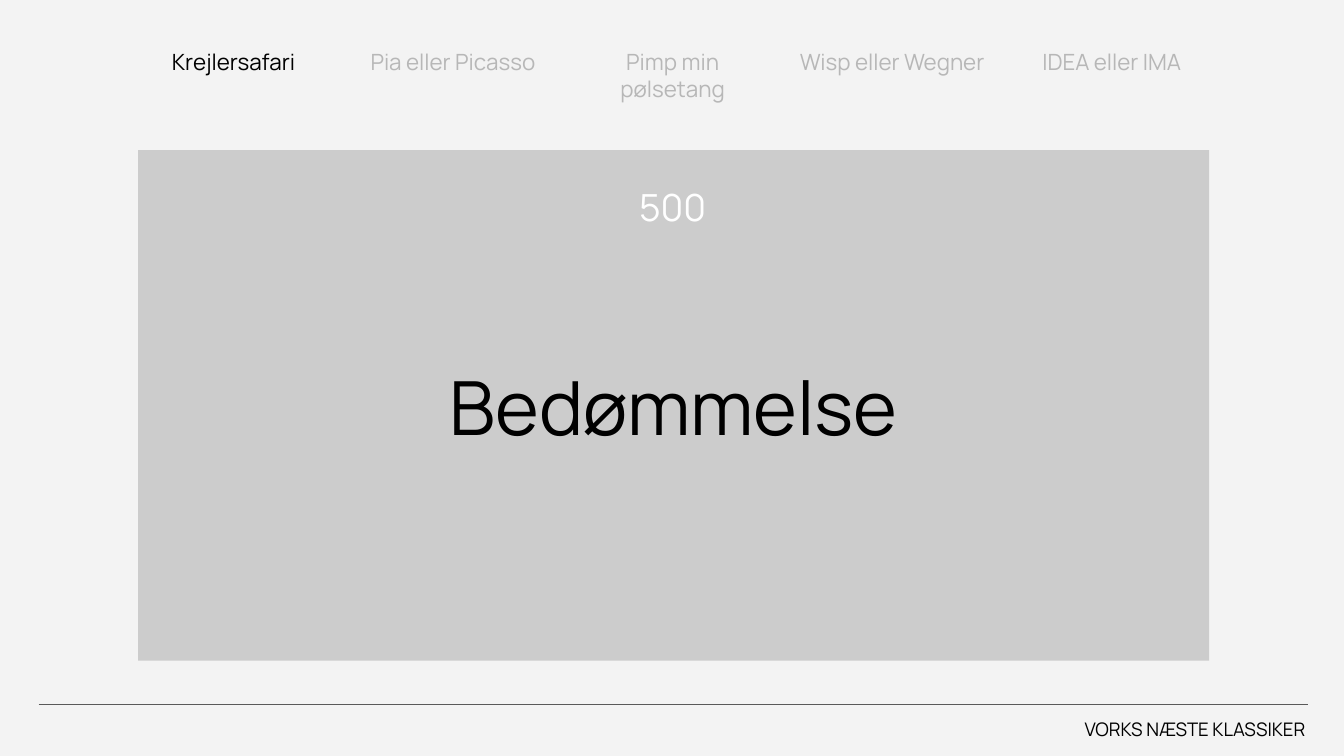
"""Build the quiz slide with its category row, answer panel and footer."""
from pptx import Presentation
from pptx.dml.color import RGBColor
from pptx.enum import shapes, text
from pptx.oxml.ns import qn
from pptx.util import Cm, Pt


def tint(code):
    """Turn a hex string into a colour."""
    return RGBColor.from_string(code)


def write(box, words, size, code, align=text.PP_ALIGN.CENTER):
    """Fill a box with one styled paragraph."""
    frame = box.text_frame
    frame.text = words
    frame.word_wrap = True
    frame.auto_size = text.MSO_AUTO_SIZE.NONE
    frame.margin_left = frame.margin_right = Cm(0.25)
    frame.margin_top = frame.margin_bottom = Cm(0.25)
    para = frame.paragraphs[0]
    para.alignment = align
    font = para.runs[0].font
    font.name = "Manrope"
    font.size = Pt(size)
    font.color.rgb = tint(code)


deck = Presentation()
deck.slide_width, deck.slide_height = Cm(25.4), Cm(14.29)
slide = deck.slides.add_slide(deck.slide_layouts[5])
slide.background.fill.solid()
slide.background.fill.fore_color.rgb = tint("F3F3F3")

panel = slide.shapes.title
panel.left, panel.top = Cm(2.61), Cm(2.84)
panel.width, panel.height = Cm(20.24), Cm(9.65)
panel.fill.solid()
panel.fill.fore_color.rgb = tint("CCCCCC")
write(panel, "Bedømmelse", 40, "000000")
panel.text_frame.vertical_anchor = text.MSO_ANCHOR.MIDDLE

score = slide.shapes.add_textbox(Cm(10.64), Cm(3.23), Cm(4.15), Cm(1.37))
write(score, "500", 20, "FFFFFF")

names = ["Krejlersafari", "Pia eller Picasso", "Pimp min pølsetang",
         "Wisp eller Wegner", "IDEA eller IMA"]
active = "Krejlersafari"
for col, name in enumerate(names):
    tab = slide.shapes.add_textbox(Cm(2.34 + 4.15 * col), Cm(0.66), Cm(4.15), Cm(1.55))
    write(tab, name, 12, "000000" if name == active else "B7B7B7")

rule = slide.shapes.add_connector(
    shapes.MSO_CONNECTOR.STRAIGHT, Cm(0.73), Cm(13.32), Cm(24.72), Cm(13.32))
rule.line.color.rgb = tint("595959")
rule.line.width = Pt(0.75)
props = rule.element.find(qn("p:spPr"))
props.append(props.makeelement(qn("a:effectLst"), {}))

footer = slide.shapes.add_textbox(Cm(7.44), Cm(13.32), Cm(17.48), Cm(0.94))
write(footer, "VORKS NÆSTE KLASSIKER", 10, "000000", text.PP_ALIGN.RIGHT)

deck.save("out.pptx")
